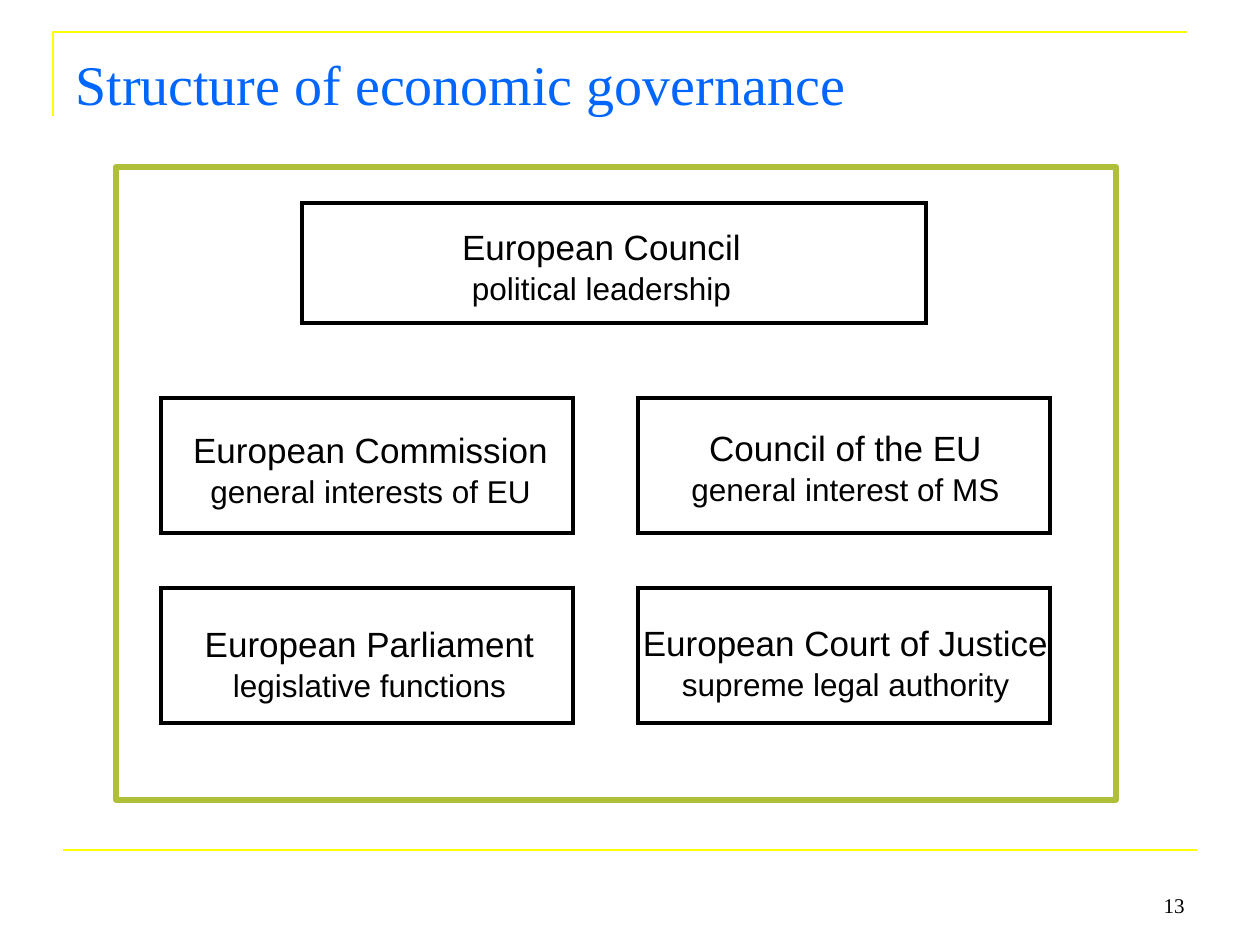
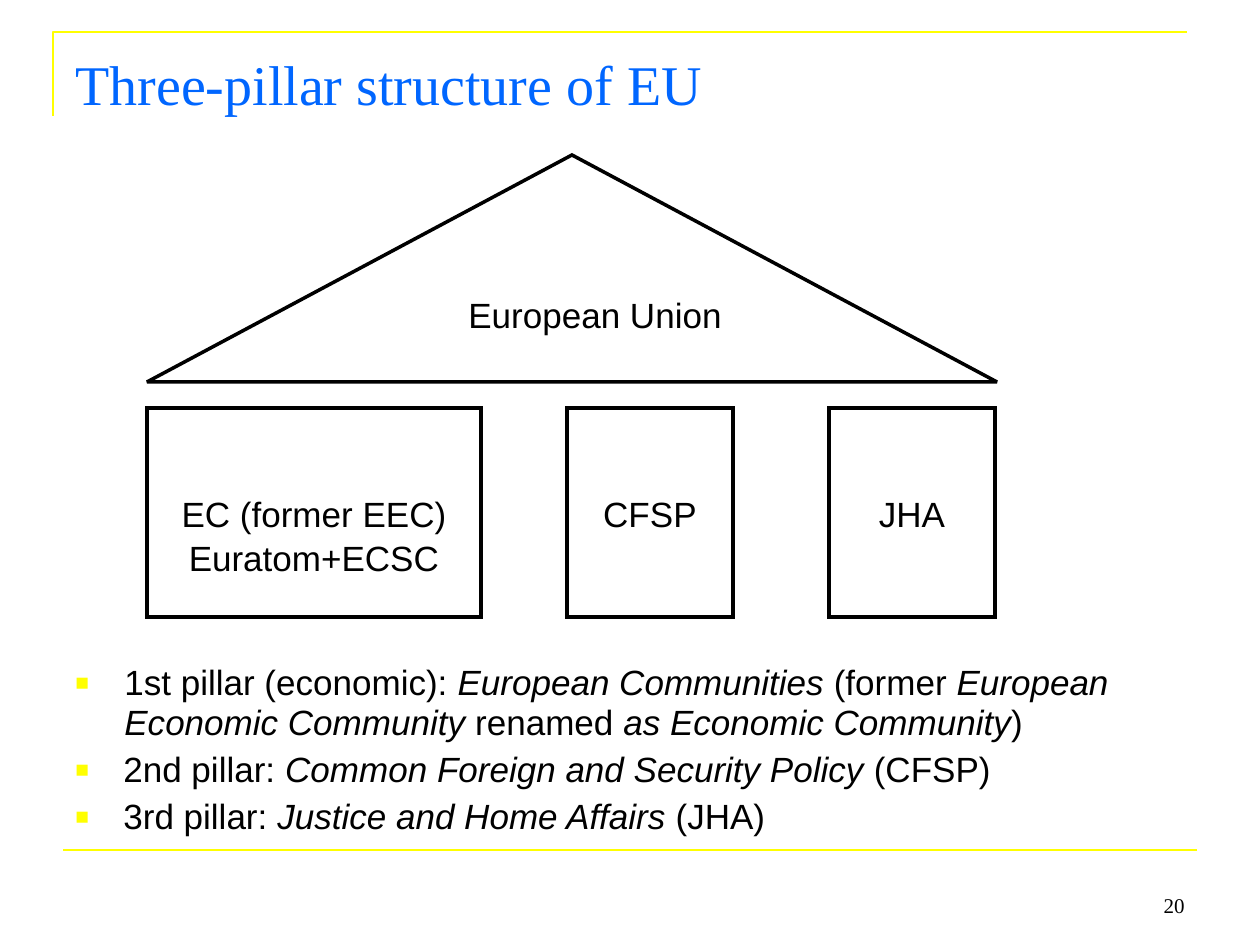
from dataclasses import dataclass

from lxml import etree
from pptx import Presentation
from pptx import util as u
from pptx.dml.color import RGBColor
from pptx.enum import shapes, text
from pptx.oxml import ns

PX = 914400 / 126
SLIDE_W, SLIDE_H = 1260, 945


@dataclass(frozen=True)
class Theme:
    rule: str = "FFFF00"
    title: str = "0066FF"
    ink: str = "000000"
    frame: str = "AFBF39"
    serif: str = "Times New Roman"
    sans: str = "Arial"
    title_pt: int = 32
    body_pt: int = 20
    role_pt: int = 18
    number_pt: int = 12
    rule_pt: float = 1.5
    box_pt: int = 2
    frame_pt: int = 3
    label_spacing: float = 1.05
    list_spacing: float = 0.95
    list_gap_pt: int = 4


THEME = Theme()

GOVERNANCE = {"title": "Structure of economic governance", "number": "13"}
FRAME = (116, 167, 1000, 633)
COUNCIL_BOX = (302, 203, 624, 120)
COUNCIL = ("European Council", "political leadership", (435, 214, 333))
# Institutions by row; each has its name, role and label place (left, top, width)
INSTITUTIONS = [
    [("European Commission", "general interests of EU", (176, 417, 389)),
     ("Council of the EU", "general interest of MS", (651, 415, 389))],
    [("European Parliament", "legislative functions", (175, 611, 389)),
     ("European Court of Justice", "supreme legal authority", (615, 610, 461))],
]
GRID_LEFT, GRID_TOP, COLUMN_STEP, ROW_STEP = 161, 398, 477, 190
CELL_W, CELL_H, LABEL_H = 412, 135, 93

PILLARS_SLIDE = {"title": "Three-pillar structure of EU", "number": "20"}
ROOF = (147, 155, 850, 227)
ROOF_LABEL = ("European Union", (456, 282, 297, 54))
PILLAR_TOP, PILLAR_H, PILLAR_LABEL_TOP, PILLAR_INSET = 408, 209, 481, 7
PILLARS = [  # lines, left, width
    (["EC (former EEC)", "Euratom+ECSC"], 147, 334),
    (["CFSP"], 567, 166),
    (["JHA"], 829, 166),
]
LIST_BOX = (63, 658, 1134, 185)
# Text pieces alternate between upright and italic
PILLAR_NOTES = [
    (49, ["1st pillar (economic): ", "European Communities", " (former ",
          "European Economic Community ", "renamed ",
          "as Economic Community", ")"]),
    (48, ["2nd pillar: ", "Common Foreign and Security Policy ", "(CFSP)"]),
    (48, ["3rd pillar: ", "Justice and Home Affairs ", "(JHA)"]),
]


def px(length):
    return u.Emu(round(length * PX))


def place(box):
    return [px(length) for length in box]


def stroke(line, color, width):
    line.color.rgb = RGBColor.from_string(color)
    line.width = u.Pt(width)


def style(font, size, color=THEME.ink, face=THEME.sans):
    font.name, font.size = face, u.Pt(size)
    font.color.rgb = RGBColor.from_string(color)


def outline(slide, box, kind=shapes.MSO_SHAPE.RECTANGLE,
            color=THEME.ink, width=THEME.box_pt, sharp=True):
    shape = slide.shapes.add_shape(kind, *place(box))
    shape.shadow.inherit = False
    shape.fill.background()
    stroke(shape.line, color, width)
    if sharp:
        miter = etree.SubElement(shape.line._get_or_add_ln(), ns.qn("a:miter"))
        miter.set("lim", "800000")


def text_frame(slide, box, top_margin=6):
    frame = slide.shapes.add_textbox(*place(box)).text_frame
    frame.word_wrap = True
    frame.margin_top = px(top_margin)
    return frame


def label(slide, box, lines, sizes, align=text.PP_ALIGN.CENTER):
    frame = text_frame(slide, box, top_margin=9)
    frame.text = "\n".join(lines)
    for paragraph, size in zip(frame.paragraphs, sizes):
        paragraph.alignment = align
        paragraph.line_spacing = THEME.label_spacing
        style(paragraph.runs[0].font, size)


def add_base(deck, title, number):
    """Add a blank slide with the yellow rules, title and slide number."""
    slide = deck.slides.add_slide(deck.slide_layouts[6])

    builder = slide.shapes.build_freeform(53, 116, scale=PX)
    builder.add_line_segments([(53, 32), (1187, 32)], close=False)
    corner = builder.convert_to_shape()
    corner.shadow.inherit = False
    corner.fill.background()
    stroke(corner.line, THEME.rule, THEME.rule_pt)

    footer_rule = slide.shapes.add_connector(
        shapes.MSO_CONNECTOR.STRAIGHT, *place((63, 850, 1197, 850)))
    stroke(footer_rule.line, THEME.rule, THEME.rule_pt)
    etree.SubElement(footer_rule._element.spPr, ns.qn("a:effectLst"))

    footer = text_frame(slide, (903, 861, 294, 63))
    footer.vertical_anchor = text.MSO_ANCHOR.BOTTOM
    footer.text = number
    footer.paragraphs[0].alignment = text.PP_ALIGN.RIGHT
    style(footer.paragraphs[0].runs[0].font, THEME.number_pt, face=THEME.serif)

    heading = text_frame(slide, (63, 38, 1134, 102), top_margin=12)
    heading.text = title
    style(heading.paragraphs[0].runs[0].font, THEME.title_pt,
          THEME.title, THEME.serif)
    return slide


def add_bullet(paragraph, indent):
    props = paragraph._p.get_or_add_pPr()
    props.set("marL", str(px(indent)))
    props.set("indent", str(-px(indent)))
    color = etree.SubElement(props, ns.qn("a:buClr"))
    etree.SubElement(color, ns.qn("a:srgbClr")).set("val", THEME.rule)
    etree.SubElement(props, ns.qn("a:buSzPct")).set("val", "65000")
    etree.SubElement(props, ns.qn("a:buFont")).set("typeface", THEME.sans)
    etree.SubElement(props, ns.qn("a:buChar")).set("char", "■")


def add_governance(deck):
    slide = add_base(deck, **GOVERNANCE)
    institutions = [(COUNCIL_BOX, COUNCIL)]
    for row, members in enumerate(INSTITUTIONS):
        for column, member in enumerate(members):
            cell = (GRID_LEFT + column * COLUMN_STEP,
                    GRID_TOP + row * ROW_STEP, CELL_W, CELL_H)
            institutions.append((cell, member))
    for cell, (name, role, spot) in institutions:
        outline(slide, cell)
        label(slide, (*spot, LABEL_H), [name, role],
              [THEME.body_pt, THEME.role_pt])
    outline(slide, FRAME, color=THEME.frame, width=THEME.frame_pt, sharp=False)


def add_pillars(deck):
    slide = add_base(deck, **PILLARS_SLIDE)
    outline(slide, ROOF, shapes.MSO_SHAPE.ISOSCELES_TRIANGLE)
    roof_name, roof_spot = ROOF_LABEL
    label(slide, roof_spot, [roof_name], [THEME.body_pt], text.PP_ALIGN.LEFT)
    for lines, left, width in PILLARS:
        outline(slide, (left, PILLAR_TOP, width, PILLAR_H))
        spot = (left + PILLAR_INSET, PILLAR_LABEL_TOP,
                width - 2 * PILLAR_INSET, 12 + 42 * len(lines))
        label(slide, spot, lines, [THEME.body_pt] * len(lines))

    notes = text_frame(slide, LIST_BOX)
    for index, (indent, pieces) in enumerate(PILLAR_NOTES):
        paragraph = notes.add_paragraph() if index else notes.paragraphs[0]
        paragraph.line_spacing = THEME.list_spacing
        paragraph.space_before = u.Pt(THEME.list_gap_pt if index else 0)
        add_bullet(paragraph, indent)
        for position, piece in enumerate(pieces):
            run = paragraph.add_run()
            run.text = piece
            style(run.font, THEME.body_pt)
            run.font.italic = position % 2 == 1


def main():
    deck = Presentation()
    deck.slide_width, deck.slide_height = px(SLIDE_W), px(SLIDE_H)
    add_governance(deck)
    add_pillars(deck)
    deck.save("out.pptx")


if __name__ == "__main__":
    main()
